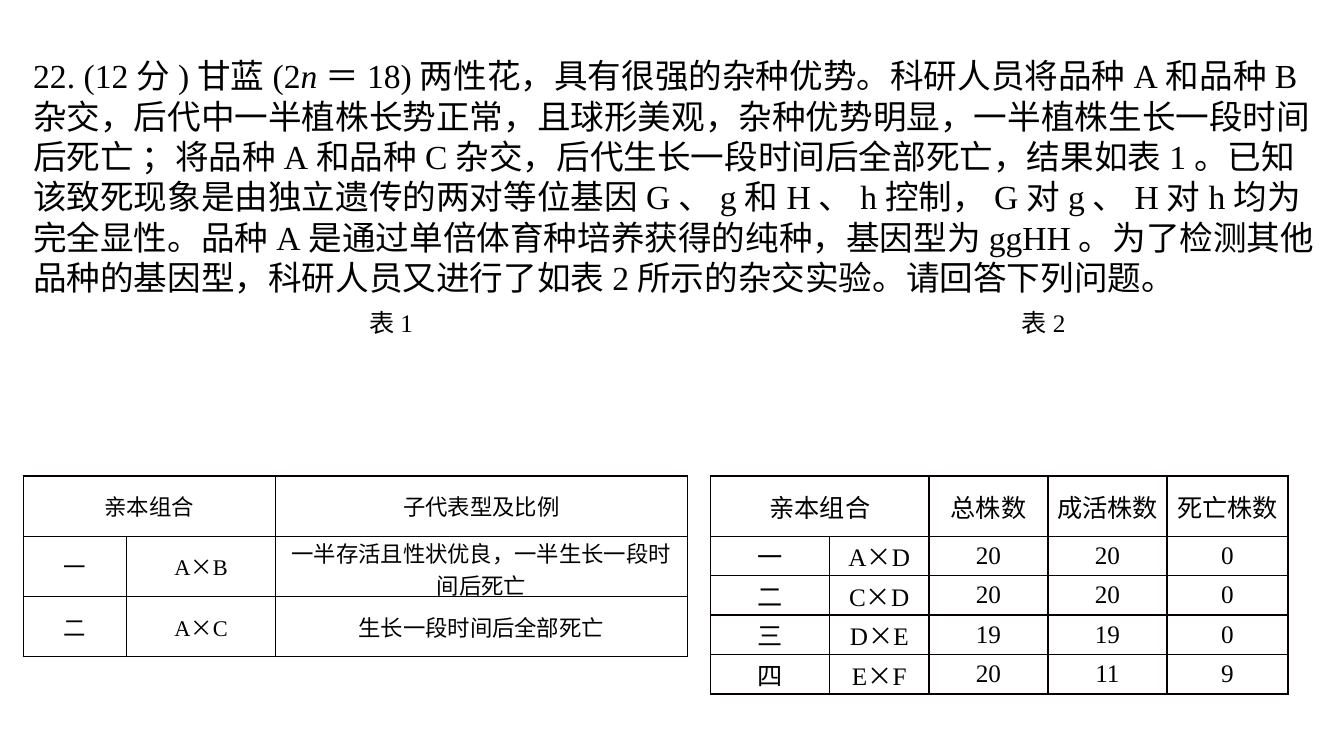
from itertools import groupby
from lxml import etree
from pptx import Presentation, util as u
from pptx.dml.color import RGBColor
from pptx.enum import text as t
from pptx.oxml import ns

Pt = u.Pt
ROMAN, SANS, HAN = "Times New Roman", "Arial", "Noto Sans CJK SC"
INK, RULE = "000000", "080000"


def write(para, words, size, wide):
    """Add words as runs: Roman for ASCII, the wide face for the rest, italic n."""

    def style(c):
        face = HAN if c == "×" else ROMAN if c.isascii() else wide
        return face, c == "n"

    for (face, slant), part in groupby(words, style):
        run = para.add_run()
        run.text = "".join(part)
        form = {"name": face, "size": Pt(size), "italic": slant}
        for key, val in form.items():
            setattr(run.font, key, val)
        run.font.color.rgb = RGBColor.from_string(INK)
        etree.SubElement(run.font._element, ns.qn("a:ea"), typeface=HAN)


prs = Presentation()
prs.slide_width, prs.slide_height = Pt(960), Pt(540)
slide = prs.slides.add_slide(prs.slide_layouts[6])

# Question and the two table captions
box = slide.shapes.add_textbox(Pt(16.6), Pt(36), Pt(935.3), Pt(334))
frame = box.text_frame
frame.word_wrap = True
stem = (
    "22. (12分)甘蓝(2n＝18)两性花，具有很强的杂种优势。科研人员将品种A和品种B"
    "杂交，后代中一半植株长势正常，且球形美观，杂种优势明显，一半植株生长一段时间后死亡 ；"
    "将品种A和品种C杂交，后代生长一段时间后全部死亡，结果如表1。"
    "已知该致死现象是由独立遗传的两对等位基因G、g和H、h控制，G对g、H对h均为完全显性。"
    "品种A是通过单倍体育种培养获得的纯种，基因型为ggHH。"
    "为了检测其他品种的基因型，科研人员又进行了如表2所示的杂交实验。请回答下列问题。"
)
body, caps = frame.paragraphs[0], frame.add_paragraph()
for para, words, size in ((body, stem, 24), (caps, "\t表1\t表2", 18)):
    para.line_spacing = Pt(28.8)
    write(para, words, size, SANS)
stops = etree.SubElement(caps._p.get_or_add_pPr(), ns.qn("a:tabLst"))
for stop in (240, 706):
    etree.SubElement(stops, ns.qn("a:tab"), pos=str(Pt(stop)), algn="l")

# Tables: left, text size, column widths, row heights, rows
tables = [
    (16.6, 16, [74, 106, 294.5], [43] * 3, [
        ["亲本组合", "", "子代表型及比例"],
        ["一", "A×B", "一半存活且性状优良，一半生长一段时间后死亡"],
        ["二", "A×C", "生长一段时间后全部死亡"],
    ]),
    (507.6, 18, [85, 71, 85, 85, 86.5], [43] + [28.2] * 4, [
        ["亲本组合", "", "总株数", "成活株数", "死亡株数"],
        ["一", "A×D", "20", "20", "0"],
        ["二", "C×D", "20", "20", "0"],
        ["三", "D×E", "19", "19", "0"],
        ["四", "E×F", "20", "11", "9"],
    ]),
]
look = {
    "vertical_anchor": t.MSO_ANCHOR.MIDDLE,
    "margin_left": Pt(5), "margin_right": Pt(5),
    "margin_top": 0, "margin_bottom": 0,
}
for left, size, cols, highs, rows in tables:
    grid = slide.shapes.add_table(
        len(highs), len(cols), Pt(left), Pt(340), Pt(sum(cols)), Pt(sum(highs))
    ).table
    grid.first_row = grid.horz_banding = False
    for col, wide in zip(grid.columns, cols):
        col.width = Pt(wide)
    for row, high, line in zip(grid.rows, highs, rows):
        row.height = Pt(high)
        for cell, words in zip(row.cells, line):
            for key, val in look.items():
                setattr(cell, key, val)
            props = cell._tc.get_or_add_tcPr()
            for side in ("lnL", "lnR", "lnT", "lnB"):
                edge = etree.SubElement(props, ns.qn("a:" + side), w=str(Pt(1)))
                fill = etree.SubElement(edge, ns.qn("a:solidFill"))
                etree.SubElement(fill, ns.qn("a:srgbClr"), val=RULE)
            cell.fill.background()
            para = cell.text_frame.paragraphs[0]
            para.alignment = t.PP_ALIGN.CENTER
            write(para, words, size, ROMAN)
    grid.cell(0, 0).merge(grid.cell(0, 1))

prs.save("out.pptx")
